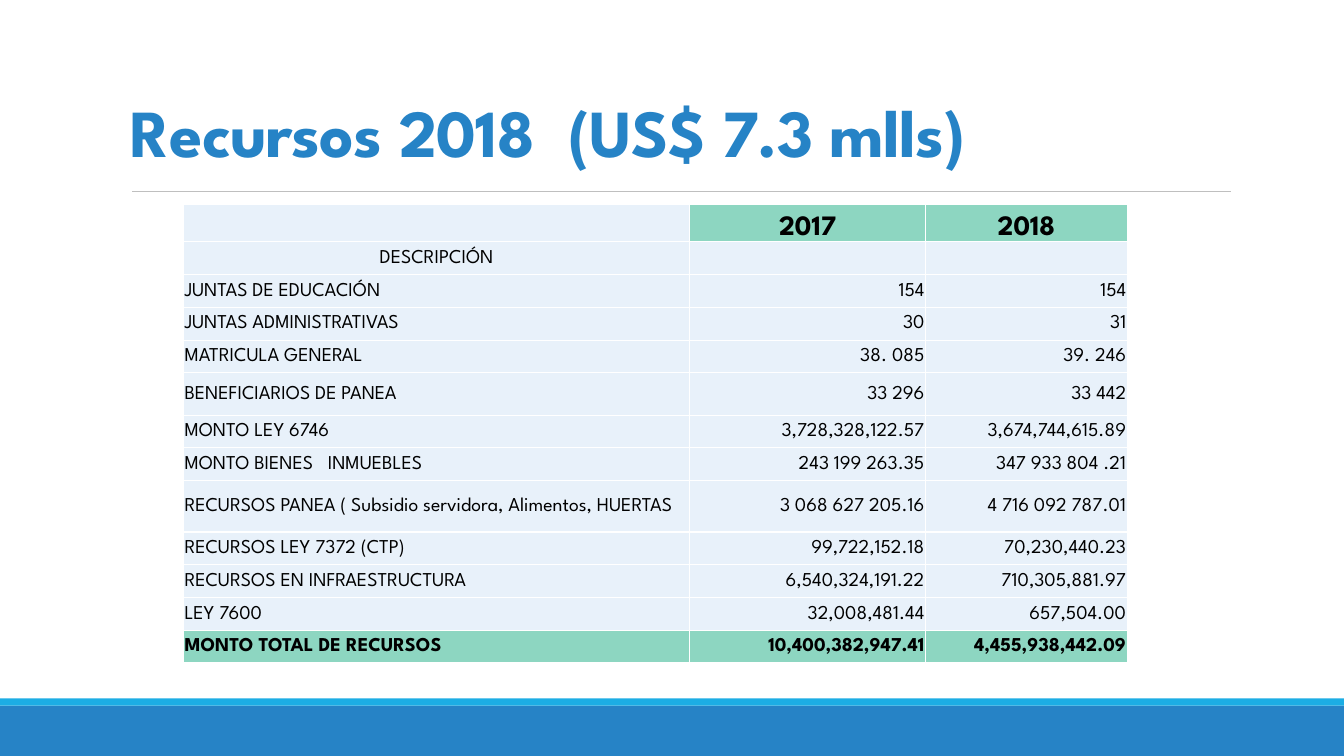
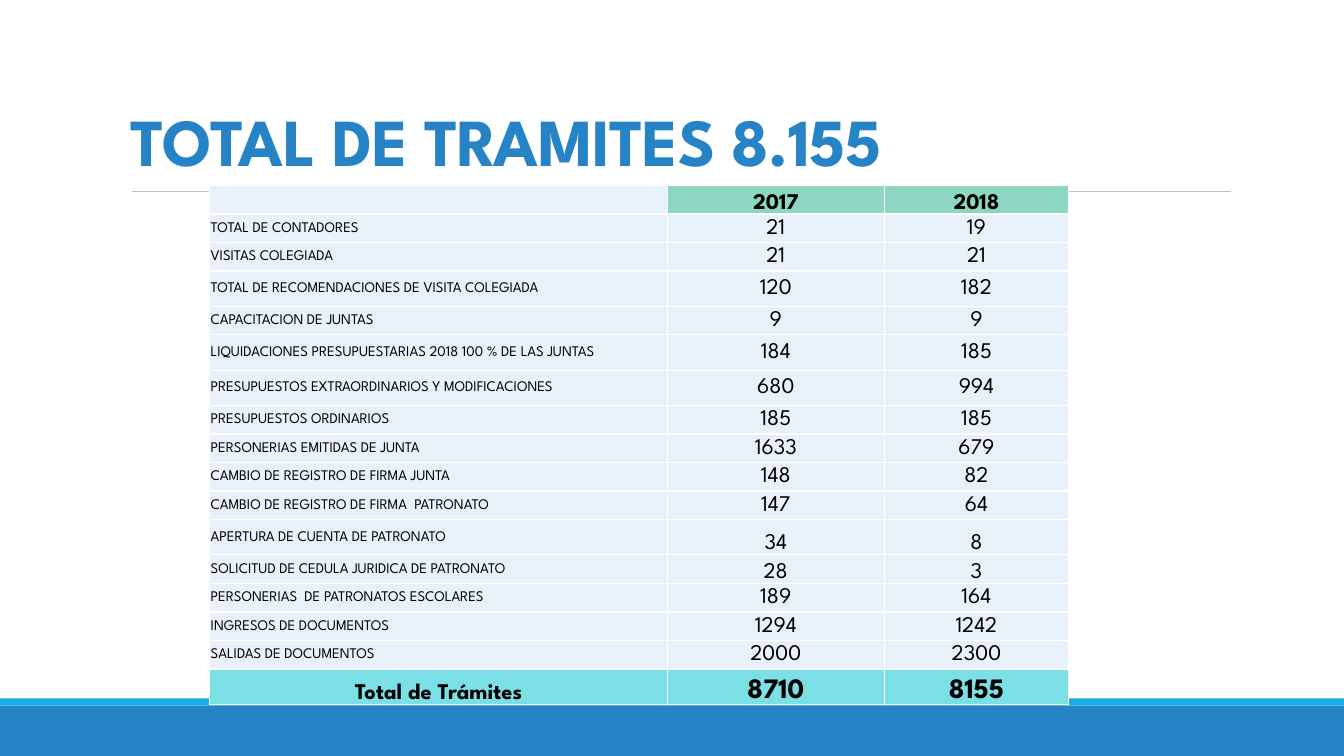
from lxml.etree import SubElement
from pptx import Presentation
from pptx.dml.color import RGBColor
from pptx.enum.shapes import MSO_CONNECTOR, MSO_SHAPE
from pptx.enum.text import MSO_ANCHOR, PP_ALIGN
from pptx.oxml.ns import qn
from pptx.util import Inches, Pt

BLUE = RGBColor(0x26, 0x83, 0xC6)
CYAN = RGBColor(0x1C, 0xAD, 0xE4)
GRAY = RGBColor(0xBF, 0xBF, 0xBF)
PALE = RGBColor(0xE8, 0xF1, 0xFA)
GREEN = RGBColor(0x8D, 0xD6, 0xC1)
AQUA = RGBColor(0x7A, 0xE0, 0xE5)
BLACK = RGBColor(0, 0, 0)
FONT = "League Spartan"
LEFT, CENTER, RIGHT = PP_ALIGN.LEFT, PP_ALIGN.CENTER, PP_ALIGN.RIGHT
MIDDLE, BOTTOM = MSO_ANCHOR.MIDDLE, MSO_ANCHOR.BOTTOM
WIDTH, HEIGHT = 13.33, 7.5

# Slide content: "tall" maps row to height, the other rows share what is left;
# "formats" maps (row, column) to what differs from the column's format
slides = [
    {
        "title": "Recursos 2018  (US$ 7.3 mlls)",
        "title_top": 0.16,
        "table": (1.82, 2.03, 4.55),
        "cols": (5.02, 2.34, 2),
        "tall": {0: 0.37, 5: 0.42, 8: 0.51},
        "sizes": (14, 14, 14),
        "aligns": (LEFT, RIGHT, RIGHT),
        "head_size": 20,
        "total_fill": GREEN,
        "formats": {(1, 0): {"align": CENTER}},
        "rows": [
            ("", "2017", "2018"),
            ("DESCRIPCIÓN", "", ""),
            ("JUNTAS DE EDUCACIÓN", "154", "154"),
            ("JUNTAS ADMINISTRATIVAS", "30", "31"),
            ("MATRICULA GENERAL", "38. 085", "39. 246"),
            ("BENEFICIARIOS DE PANEA", "33 296", "33 442"),
            ("MONTO LEY 6746", "3,728,328,122.57", "3,674,744,615.89"),
            ("MONTO BIENES   INMUEBLES", "243 199 263.35", "347 933 804 .21"),
            ("RECURSOS PANEA ( Subsidio servidora, Alimentos, HUERTAS",
             "3 068 627 205.16", "4 716 092 787.01"),
            ("RECURSOS LEY 7372 (CTP)", "99,722,152.18", "70,230,440.23"),
            ("RECURSOS EN INFRAESTRUCTURA", "6,540,324,191.22", "710,305,881.97"),
            ("LEY 7600", "32,008,481.44", "657,504.00"),
            ("MONTO TOTAL DE RECURSOS", "10,400,382,947.41", "4,455,938,442.09"),
        ],
    },
    {
        "title": "TOTAL DE TRAMITES 8.155",
        "title_top": 0.25,
        "table": (2.08, 1.84, 5.15),
        "cols": (4.54, 2.15, 1.83),
        "tall": {3: 0.35, 5: 0.35, 6: 0.35, 11: 0.35, 16: 0.35},
        "sizes": (10.5, 16, 16),
        "aligns": (LEFT, CENTER, CENTER),
        "head_size": 16,
        "total_fill": AQUA,
        "formats": {
            **{(i, j): {"anchor": BOTTOM} for i in (11, 12) for j in (1, 2)},
            (16, 0): {"anchor": BOTTOM, "align": CENTER, "size": 16},
            **{(16, j): {"anchor": BOTTOM, "size": 20} for j in (1, 2)},
        },
        "rows": [
            ("", "2017", "2018"),
            ("TOTAL DE CONTADORES", "21", "19"),
            ("VISITAS COLEGIADA", "21", "21"),
            ("TOTAL DE RECOMENDACIONES DE VISITA COLEGIADA", "120", "182"),
            ("CAPACITACION DE JUNTAS", "9", "9"),
            ("LIQUIDACIONES PRESUPUESTARIAS 2018 100 % DE LAS JUNTAS", "184", "185"),
            ("PRESUPUESTOS EXTRAORDINARIOS Y MODIFICACIONES", "680", "994"),
            ("PRESUPUESTOS ORDINARIOS", "185", "185"),
            ("PERSONERIAS EMITIDAS DE JUNTA", "1633", "679"),
            ("CAMBIO DE REGISTRO DE FIRMA JUNTA", "148", "82"),
            ("CAMBIO DE REGISTRO DE FIRMA  PATRONATO", "147", "64"),
            ("APERTURA DE CUENTA DE PATRONATO", "34", "8"),
            ("SOLICITUD DE CEDULA JURIDICA DE PATRONATO", "28", "3"),
            ("PERSONERIAS  DE PATRONATOS ESCOLARES", "189", "164"),
            ("INGRESOS DE DOCUMENTOS", "1294", "1242"),
            ("SALIDAS DE DOCUMENTOS", "2000", "2300"),
            ("Total de Trámites", "8710", "8155"),
        ],
    },
]


def add_text(p, text, size, color, bold):
    r = p.add_run()
    r.text = text
    for name, value in {"name": FONT, "size": Pt(size), "bold": bold}.items():
        setattr(r.font, name, value)
    r.font.color.rgb = color
    return r


def add_borders(cell):
    # Borders come before the fill in the cell properties
    tcPr = cell._tc.get_or_add_tcPr()
    for side in ("lnL", "lnR", "lnT", "lnB"):
        ln = SubElement(tcPr, qn(f"a:{side}"), w=str(Pt(1)))
        fill = SubElement(ln, qn("a:solidFill"))
        SubElement(fill, qn("a:srgbClr"), val="FFFFFF")


prs = Presentation()
prs.slide_width, prs.slide_height = Inches(WIDTH), Inches(HEIGHT)

for content in slides:
    s = prs.slides.add_slide(prs.slide_layouts[6])

    # Bottom bands
    for top, height, color in ((7, 0.5, BLUE), (6.93, 0.07, CYAN)):
        sp = s.shapes.add_shape(MSO_SHAPE.RECTANGLE, 0, Inches(top),
                                prs.slide_width, Inches(height))
        sp.shadow.inherit = False
        sp.fill.solid()
        sp.fill.fore_color.rgb = color
        sp.line.fill.background()

    # Rule under the title
    rule = s.shapes.add_connector(MSO_CONNECTOR.STRAIGHT, Inches(1.31), Inches(1.9),
                                  Inches(12.21), Inches(1.9))
    rule.line.color.rgb = GRAY
    rule.line.width = Pt(0.5)
    SubElement(rule._element.spPr, qn("a:effectLst"))

    # Title
    tf = s.shapes.add_textbox(Inches(1.2), Inches(content["title_top"]),
                              Inches(11), Inches(1.59)).text_frame
    tf.word_wrap = True
    tf.vertical_anchor = BOTTOM
    p = tf.paragraphs[0]
    p.line_spacing = 0.85
    r = add_text(p, content["title"], 48, BLUE, True)
    r.font._element.set("spc", "-50")

    # Table grid
    rows, cols, tall = content["rows"], content["cols"], content["tall"]
    left, top, height = content["table"]
    table = s.shapes.add_table(len(rows), len(cols), Inches(left), Inches(top),
                               Inches(sum(cols)), Inches(height)).table
    table.first_row = table.horz_banding = False
    for j, width in enumerate(cols):
        table.columns[j].width = Inches(width)
    row_height = (height - sum(tall.values())) / (len(rows) - len(tall))

    # Table cells
    for i, row in enumerate(rows):
        table.rows[i].height = Inches(tall.get(i, row_height))
        head, total = i == 0, i == len(rows) - 1
        for j, text in enumerate(row):
            fmt = {"size": content["sizes"][j], "align": content["aligns"][j],
                   "anchor": MIDDLE, "fill": PALE}
            if head and text:
                fmt.update(size=content["head_size"], align=CENTER,
                           anchor=BOTTOM, fill=GREEN)
            if total:
                fmt["fill"] = content["total_fill"]
            fmt.update(content["formats"].get((i, j), {}))

            cell = table.cell(i, j)
            add_borders(cell)
            cell.fill.solid()
            cell.fill.fore_color.rgb = fmt["fill"]
            cell.vertical_anchor = fmt["anchor"]
            for side in ("left", "right", "top"):
                setattr(cell, f"margin_{side}", Inches(0.01))
            cell.margin_bottom = 0
            p = cell.text_frame.paragraphs[0]
            p.alignment = fmt["align"]
            if text:
                add_text(p, text, fmt["size"], BLACK, head or total)
            else:
                # Keeps an empty cell from stretching its row
                SubElement(p._p, qn("a:endParaRPr"), sz="1000")

prs.save("out.pptx")
